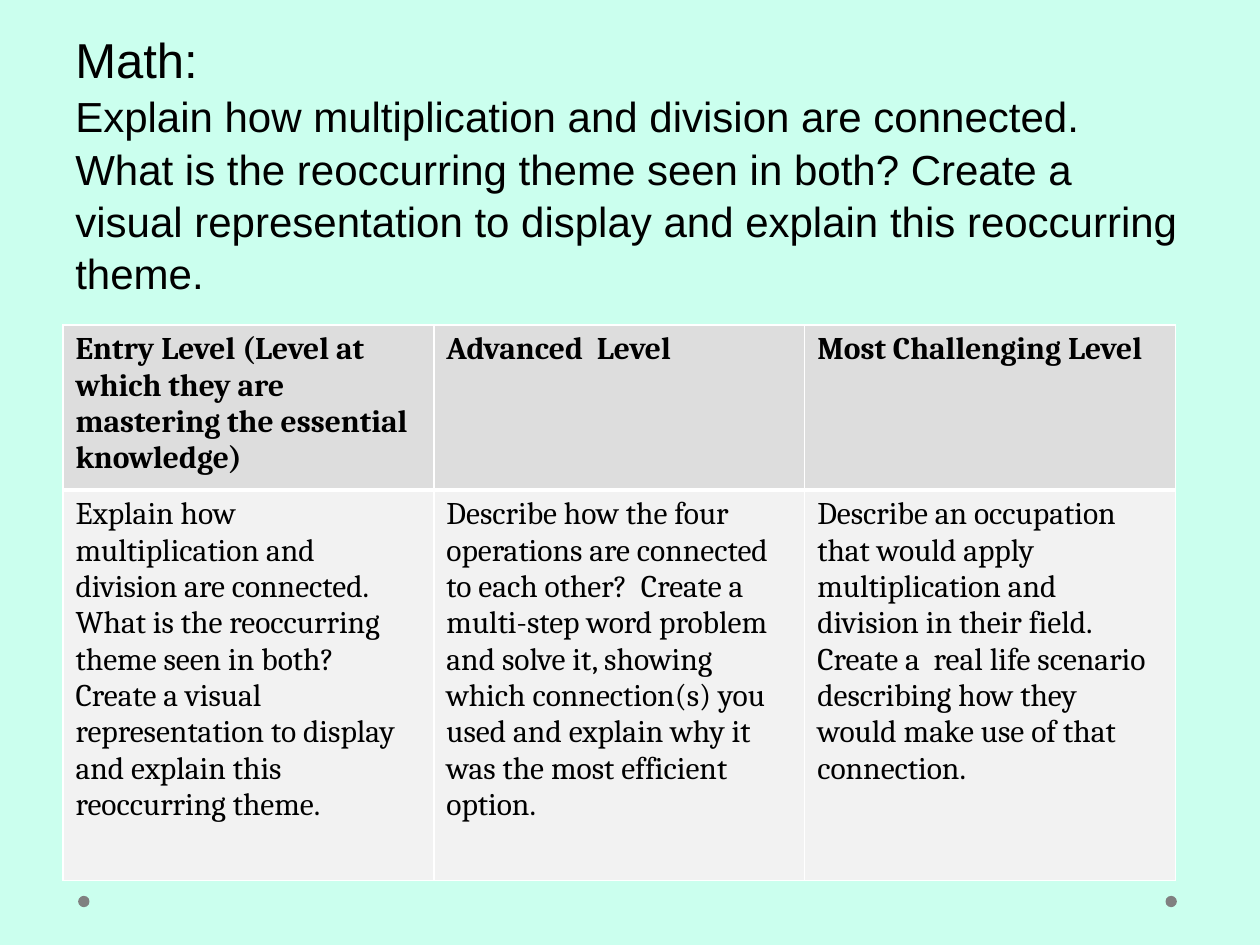
from lxml.etree import SubElement
from pptx import Presentation
from pptx.dml.color import RGBColor
from pptx.enum.shapes import MSO_SHAPE
from pptx.oxml.ns import qn
from pptx.util import Inches, Pt

MINT = RGBColor(0xCB, 0xFF, 0xEE)
BLACK = RGBColor(0, 0, 0)
WHITE = RGBColor(0xFF, 0xFF, 0xFF)
GREY = RGBColor(0x80, 0x80, 0x80)
HEADER_FILL = RGBColor(0xDD, 0xDD, 0xDD)
BODY_FILL = RGBColor(0xF2, 0xF2, 0xF2)

TASK = ("Explain how multiplication and division are connected.  What is the "
        "reoccurring theme seen in both? Create a visual representation to "
        "display and explain this reoccurring theme.")
LEVELS = [
    ("Entry Level (Level at which they are mastering the essential knowledge)",
     TASK),
    ("Advanced  Level",
     "Describe how the four operations are connected to each other?  Create a "
     "multi-step word problem  and solve it, showing which connection(s) you "
     "used and explain why it was the most efficient option."),
    ("Most Challenging Level",
     "Describe an occupation that would apply multiplication and division in "
     "their field. Create a  real life scenario describing how they would make "
     "use of that connection."),
]


def write(p, text, size=18, font="Cambria", bold=False, color=BLACK, spacing=None):
    r = p.add_run()
    r.text = text
    r.font.size = Pt(size)
    r.font.name = font
    r.font.bold = bold
    r.font.color.rgb = color
    p.line_spacing = spacing


def set_borders(cell, **widths):
    """Draw white cell borders; widths maps L, R, T, B to points."""
    tcPr = cell._tc.get_or_add_tcPr()
    for i, (side, width) in enumerate(widths.items()):
        ln = tcPr.makeelement(qn(f"a:ln{side}"), {"w": str(Pt(width))})
        fill = SubElement(ln, qn("a:solidFill"))
        SubElement(fill, qn("a:srgbClr"), val=str(WHITE))
        tcPr.insert(i, ln)


def add_heading(s, left, top, width, height):
    tf = s.shapes.add_textbox(left, top, width, height).text_frame
    tf.word_wrap = True
    write(tf.paragraphs[0], "Math:", size=28, font="Arial", spacing=1.04)
    write(tf.add_paragraph(), TASK, size=24, font="Arial", spacing=1.04)


def add_levels_table(s, left, top, width, height, header_height):
    table = s.shapes.add_table(2, len(LEVELS), left, top, width, height).table
    table.rows[0].height = header_height
    table.rows[1].height = height - header_height
    for col, texts in enumerate(LEVELS):
        table.columns[col].width = width // len(LEVELS)
        for row, text in enumerate(texts):
            header = row == 0
            cell = table.cell(row, col)
            cell.fill.solid()
            cell.fill.fore_color.rgb = HEADER_FILL if header else BODY_FILL
            set_borders(cell, L=1, R=1, T=1 if header else 3, B=3 if header else 1)
            write(cell.text_frame.paragraphs[0], text, bold=header)


def add_corner_dots(s, left, top, width, size):
    for x in (left, left + width - size):
        sp = s.shapes.add_shape(MSO_SHAPE.OVAL, x, top, size, size)
        sp.shadow.inherit = False
        sp.fill.solid()
        sp.fill.fore_color.rgb = GREY
        sp.line.fill.background()


def main():
    prs = Presentation()
    prs.slide_width, prs.slide_height = Inches(10), Inches(7.5)
    s = prs.slides.add_slide(prs.slide_layouts[6])
    s.background.fill.solid()
    s.background.fill.fore_color.rgb = MINT
    add_corner_dots(s, Inches(0.62), Inches(7.11), Inches(8.72), Inches(0.09))
    add_heading(s, Inches(0.5), Inches(0.17), Inches(9), Inches(3))
    add_levels_table(s, Inches(0.5), Inches(2.58), Inches(8.83), Inches(4.41),
                     header_height=Inches(1.31))
    prs.save("out.pptx")


if __name__ == "__main__":
    main()
